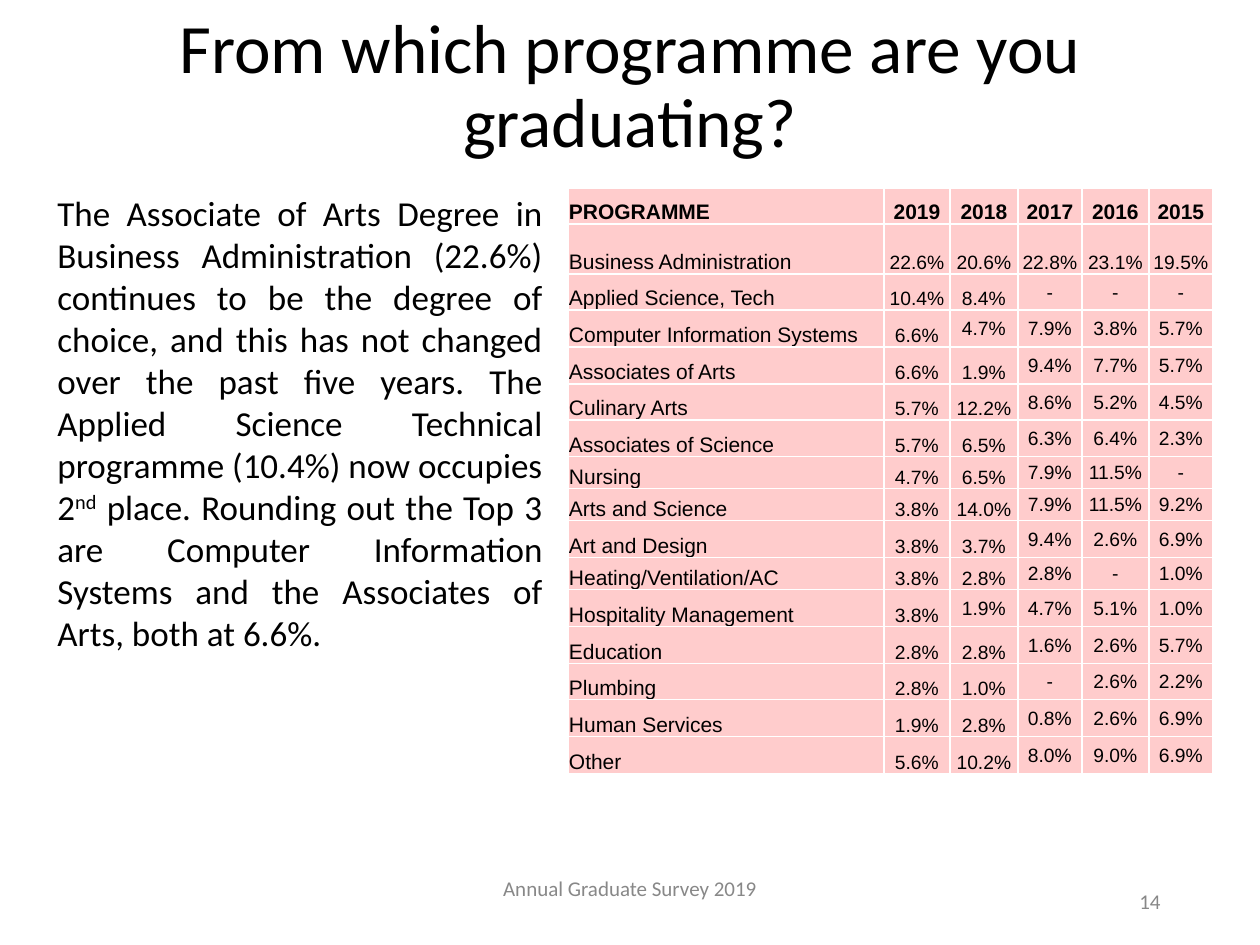
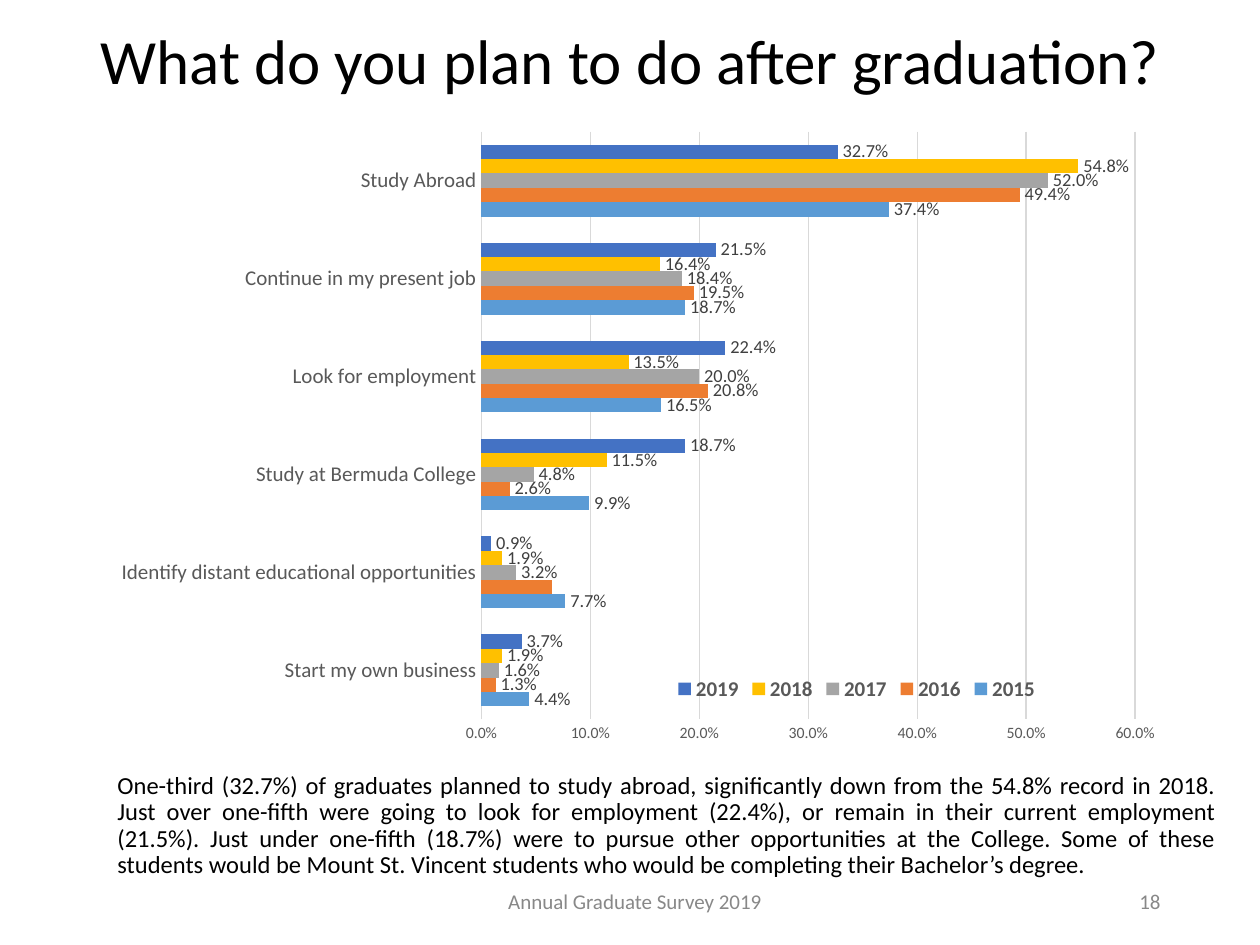
from lxml import etree
from pptx import Presentation
from pptx.chart.data import CategoryChartData
from pptx.dml.color import RGBColor
from pptx.enum.chart import XL_CHART_TYPE, XL_LABEL_POSITION, XL_LEGEND_POSITION, XL_TICK_MARK
from pptx.enum.text import MSO_ANCHOR, MSO_AUTO_SIZE, PP_ALIGN
from pptx.oxml import parse_xml
from pptx.oxml.ns import nsdecls, qn
from pptx.util import Pt

TOP, MIDDLE, BOTTOM = MSO_ANCHOR.TOP, MSO_ANCHOR.MIDDLE, MSO_ANCHOR.BOTTOM
LEFT, CENTER, RIGHT, JUSTIFY = PP_ALIGN.LEFT, PP_ALIGN.CENTER, PP_ALIGN.RIGHT, PP_ALIGN.JUSTIFY
NO_TICK = XL_TICK_MARK.NONE
PX = 914400 / 126
COLORS = {
    "text": "000000", "footer": "888888", "cell": "FFCCCC", "border": "FFFFFF",
    "axis": "595959", "grid": "D9D9D9", "label": "404040",
    "2015": "5B9BD5", "2016": "ED7D31", "2017": "A5A5A5", "2018": "FFC000", "2019": "4472C4",
}


def px(*lengths):
    return [round(length * PX) for length in lengths]


def style(font, size, color, bold=False, name="Calibri"):
    font.name, font.size, font.bold = name, Pt(size), bold
    font.color.rgb = RGBColor.from_string(COLORS[color])


prs = Presentation()
prs.slide_width, prs.slide_height = px(1260, 945)

pages = [
    ("From which programme are you graduating?", 39.6, (63, 23, 1134, 130), "14", 417, TOP, 0),
    ("What do you plan to do after graduation?", 36, (63, 5, 1134, 118), "18", 422, MIDDLE, 6),
]
slides = []
for heading, size, place, number, footer_left, footer_anchor, footer_inset in pages:
    slide = prs.slides.add_slide(prs.slide_layouts[5])
    slides.append(slide)
    title = slide.shapes.title
    title.left, title.top, title.width, title.height = px(*place)
    title.text_frame.text = heading
    title.text_frame.auto_size = MSO_AUTO_SIZE.NONE
    title.text_frame.vertical_anchor = MIDDLE
    title_line = title.text_frame.paragraphs[0]
    title_line.alignment, title_line.line_spacing = CENTER, 0.9
    style(title_line.font, size, "text")
    for words, left, width, align, anchor, inset in [
        ("Annual Graduate Survey 2019", footer_left, 426, CENTER, footer_anchor, footer_inset),
        (number, 890, 283, RIGHT, MIDDLE, 6),
    ]:
        footer = slide.shapes.add_textbox(*px(left, 876, width, 50)).text_frame
        footer.word_wrap, footer.vertical_anchor = True, anchor
        footer.margin_top = px(inset)[0]
        footer.text = words
        footer.paragraphs[0].alignment = align
        style(footer.paragraphs[0].font, 12, "footer")

programme_slide, plans_slide = slides

summary = programme_slide.shapes.add_textbox(*px(45, 185, 510, 546)).text_frame
summary.word_wrap = True
summary_line = summary.paragraphs[0]
summary_line.alignment = JUSTIFY
style(summary_line.font, 20, "text")
for words, baseline in [
    ("The Associate of Arts Degree in Business Administration (22.6%) continues to be the degree "
     "of choice, and this has not changed over the past five years. The Applied Science Technical "
     "programme (10.4%) now occupies 2", "0"),
    ("nd", "30000"),
    (" place. Rounding out the Top 3 are Computer Information Systems and the Associates of Arts, "
     "both at 6.6%.", "0"),
]:
    run = summary_line.add_run()
    run.text = words
    run._r.get_or_add_rPr().set("baseline", baseline)

programme_rows = [
    (36, "PROGRAMME", "2019 2018 2017 2016 2015"),
    (50, "Business Administration", "22.6% 20.6% 22.8% 23.1% 19.5%"),
    (36, "Applied Science, Tech", "10.4% 8.4% - - -"),
    (37, "Computer Information Systems", "6.6% 4.7% 7.9% 3.8% 5.7%"),
    (37, "Associates of Arts", "6.6% 1.9% 9.4% 7.7% 5.7%"),
    (36, "Culinary Arts", "5.7% 12.2% 8.6% 5.2% 4.5%"),
    (37, "Associates of Science", "5.7% 6.5% 6.3% 6.4% 2.3%"),
    (32, "Nursing", "4.7% 6.5% 7.9% 11.5% -"),
    (32, "Arts and Science", "3.8% 14.0% 7.9% 11.5% 9.2%"),
    (37, "Art and Design", "3.8% 3.7% 9.4% 2.6% 6.9%"),
    (32, "Heating/Ventilation/AC", "3.8% 2.8% 2.8% - 1.0%"),
    (37, "Hospitality Management", "3.8% 1.9% 4.7% 5.1% 1.0%"),
    (37, "Education", "2.8% 2.8% 1.6% 2.6% 5.7%"),
    (36, "Plumbing", "2.8% 1.0% - 2.6% 2.2%"),
    (37, "Human Services", "1.9% 2.8% 0.8% 2.6% 6.9%"),
    (37, "Other", "5.6% 10.2% 8.0% 9.0% 6.9%"),
]
column_widths = [316, 66, 68, 64, 67, 64]
middle_2018 = ("Computer Information Systems", "Hospitality Management")
programmes = programme_slide.shapes.add_table(
    len(programme_rows), len(column_widths), *px(568, 188, 645, 586)).table
programmes.first_row = programmes.horz_banding = False
for column, width in zip(programmes.columns, px(*column_widths)):
    column.width = width
for r, (height, programme, shares) in enumerate(programme_rows):
    programmes.rows[r].height = px(height)[0]
    for c, words in enumerate([programme, *shares.split()]):
        cell = programmes.cell(r, c)
        cell.text = words
        cell.margin_left, cell.margin_top, cell.margin_right, cell.margin_bottom = px(1, 1, 1, 0)
        centred = (c > 2 and r > 1) or (c == 2 and programme in middle_2018)
        cell.vertical_anchor = MIDDLE if centred else BOTTOM
        cell_line = cell.text_frame.paragraphs[0]
        cell_line.alignment = CENTER if c else LEFT
        style(cell_line.font, 11 if r and c else 12, "text", r == 0, "Arial")
        borders = cell._tc.get_or_add_tcPr()
        for side in ("lnL", "lnR", "lnT", "lnB"):
            borders.append(parse_xml(
                f'<a:{side} {nsdecls("a")} w="12700"><a:solidFill>'
                f'<a:srgbClr val="{COLORS["border"]}"/></a:solidFill></a:{side}>'))
        cell.fill.solid()
        cell.fill.fore_color.rgb = RGBColor.from_string(COLORS["cell"])

plans = CategoryChartData(number_format="0.0%")
plans.categories = [
    "Start my own business", "Identify distant educational opportunities",
    "Study at Bermuda College", "Look for employment",
    "Continue in my present job", "Study Abroad",
]
for year, shares in {
    "2015": (0.044, 0.077, 0.099, 0.165, 0.187, 0.374),
    "2016": (0.013, 0.065, 0.026, 0.208, 0.195, 0.494),
    "2017": (0.016, 0.032, 0.048, 0.2, 0.184, 0.52),
    "2018": (0.019, 0.019, 0.115, 0.135, 0.164, 0.548),
    "2019": (0.037, 0.009, 0.187, 0.224, 0.215, 0.327),
}.items():
    plans.add_series(year, shares)
chart = plans_slide.shapes.add_chart(
    XL_CHART_TYPE.BAR_CLUSTERED, *px(96, 108, 1086, 659), plans).chart
chart.has_title = False
style(chart.font, 10, "text")

bars = chart.plots[0]
bars.gap_width, bars.overlap, bars.vary_by_categories = 182, 0, False
for series in bars.series:
    series.format.fill.solid()
    series.format.fill.fore_color.rgb = RGBColor.from_string(COLORS[series.name])
    labels = series.data_labels
    labels.show_value = True
    labels.number_format, labels.number_format_is_linked = "0.0%", False
    labels.position = XL_LABEL_POSITION.OUTSIDE_END
    style(labels.font, 10.5, "label")
    if series.name == "2016":
        labels._element.insert(0, parse_xml(
            f'<c:dLbl {nsdecls("c")}><c:idx val="1"/><c:delete val="1"/></c:dLbl>'))

for axis, size in ((chart.category_axis, 12), (chart.value_axis, 9)):
    axis.major_tick_mark = axis.minor_tick_mark = NO_TICK
    style(axis.tick_labels.font, size, "axis")
chart.category_axis.has_major_gridlines = False
share_axis = chart.value_axis
share_axis.minimum_scale, share_axis.maximum_scale, share_axis.major_unit = 0, 0.6, 0.1
share_axis.tick_labels.number_format = "0.0%"
share_axis.tick_labels.number_format_is_linked = False
share_axis.format.line.fill.background()
for line in (chart.category_axis.format.line, share_axis.major_gridlines.format.line):
    line.color.rgb = RGBColor.from_string(COLORS["grid"])
    line.width = Pt(0.75)

chart.has_legend = True
chart.legend.position = XL_LEGEND_POSITION.BOTTOM
chart.legend.include_in_layout = True
style(chart.legend.font, 12, "axis", True)

plot_area = chart._chartSpace.chart.plotArea
legend = chart.legend._element
for old_layout in plot_area.findall(qn("c:layout")) + legend.findall(qn("c:layout")):
    old_layout.getparent().remove(old_layout)
plot_layout = [("layoutTarget", "inner"), ("xMode", "edge"), ("yMode", "edge"),
               ("x", 0.355), ("y", 0.036), ("w", 0.602), ("h", 0.892)]
legend_layout = [("xMode", "edge"), ("yMode", "edge"), ("x", 0.53), ("y", 0.855)]
for parent, position, settings in ((plot_area, 0, plot_layout), (legend, 1, legend_layout)):
    layout = etree.Element(qn("c:layout"))
    manual = etree.SubElement(layout, qn("c:manualLayout"))
    for tag, value in settings:
        etree.SubElement(manual, qn(f"c:{tag}")).set("val", str(value))
    parent.insert(position, layout)

findings = plans_slide.shapes.add_textbox(*px(105, 767, 1124, 122)).text_frame
findings.word_wrap = True
findings.text = (
    "One-third (32.7%) of graduates planned to study abroad, significantly down from the 54.8% "
    "record in 2018. Just over one-fifth were going to look for employment (22.4%), or remain in "
    "their current employment (21.5%). Just under one-fifth (18.7%) were to pursue other "
    "opportunities at the College. Some of these students would be Mount St. Vincent students who "
    "would be completing their Bachelor’s degree.")
findings_line = findings.paragraphs[0]
findings_line.alignment, findings_line.line_spacing = JUSTIFY, 0.9
style(findings_line.font, 14, "text")

prs.save("out.pptx")
